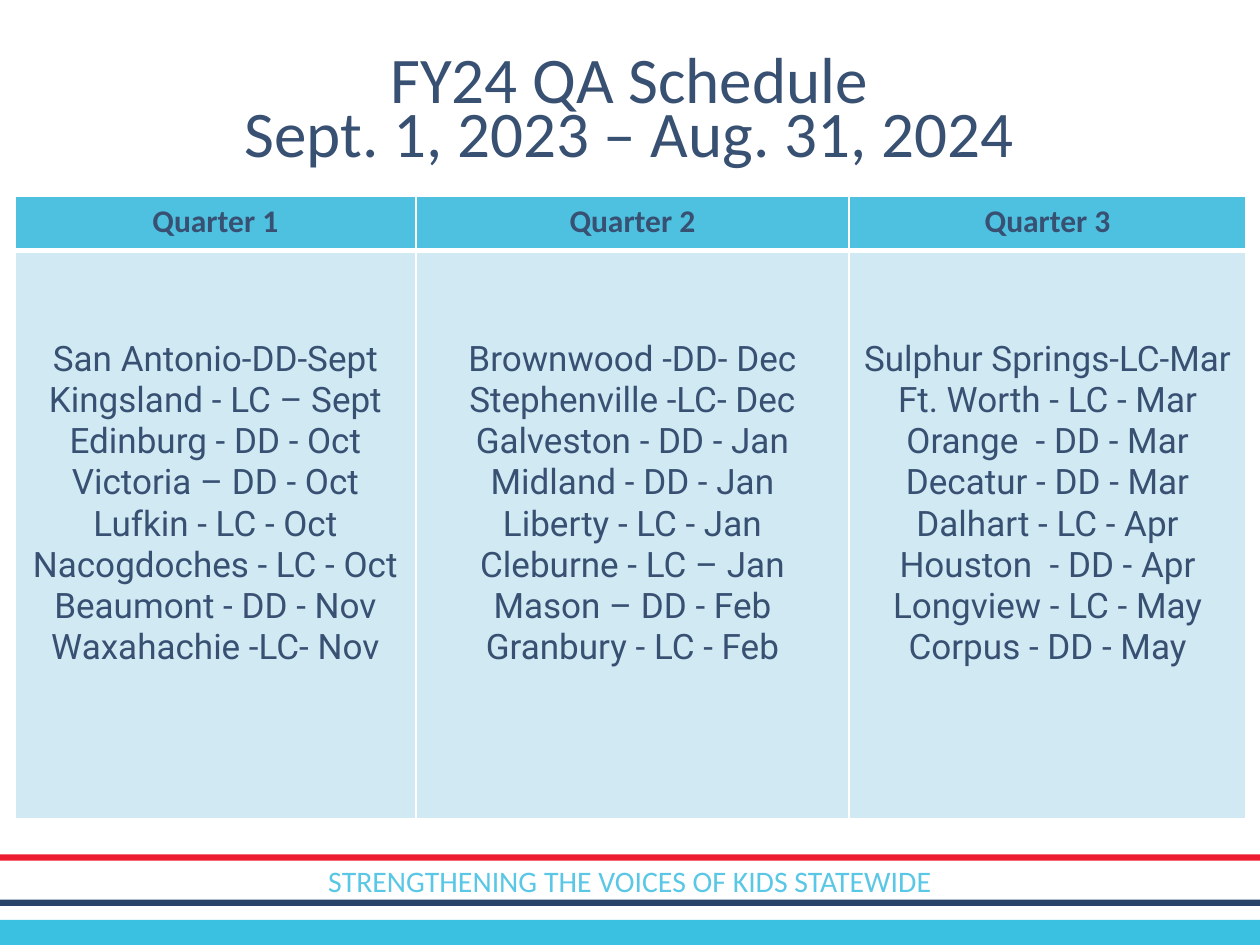
from dataclasses import dataclass

from lxml.etree import SubElement
from pptx import Presentation
from pptx.dml.color import RGBColor
from pptx.enum.shapes import MSO_SHAPE
from pptx.enum.text import MSO_ANCHOR, MSO_AUTO_SIZE, PP_ALIGN
from pptx.oxml.ns import qn
from pptx.util import Inches, Pt


@dataclass(frozen=True)
class Theme:
    """Colours, fonts and type sizes of the deck."""
    navy: str = "385072"
    sky: str = "59C7E5"
    header: str = "4EC1E0"
    body: str = "D0E9F3"
    border: str = "FFFFFF"
    red_rule: str = "ED1C2E"
    navy_rule: str = "2A4469"
    band: str = "3AC1E1"
    heading_font: str = "Calibri"
    list_font: str = "Roboto"
    title_size: float = 37.2
    header_size: float = 18
    list_size: float = 20
    footer_size: float = 17


THEME = Theme()
TITLE = "FY24 QA Schedule\vSept. 1, 2023 – Aug. 31, 2024"
FOOTER = "STRENGTHENING THE VOICES OF KIDS STATEWIDE"
SCHEDULE = {
    "Quarter 1": [
        "San Antonio-DD-Sept", "Kingsland - LC – Sept",
        "Edinburg - DD - Oct", "Victoria – DD - Oct",
        "Lufkin - LC - Oct", "Nacogdoches - LC - Oct",
        "Beaumont - DD - Nov", "Waxahachie -LC- Nov",
    ],
    "Quarter 2": [
        "Brownwood -DD- Dec", "Stephenville -LC- Dec",
        "Galveston - DD - Jan", "Midland - DD - Jan",
        "Liberty - LC - Jan", "Cleburne - LC – Jan",
        "Mason – DD - Feb", "Granbury - LC - Feb",
    ],
    "Quarter 3": [
        "Sulphur Springs-LC-Mar", "Ft. Worth - LC - Mar",
        "Orange  - DD - Mar", "Decatur - DD - Mar",
        "Dalhart - LC - Apr", "Houston  - DD - Apr",
        "Longview - LC - May", "Corpus - DD - May",
    ],
}


def set_values(target, values):
    """Set each attribute named in a dict."""
    for name, value in values.items():
        setattr(target, name, value)


def write_lines(frame, lines, font, size, color, bold=False):
    """Fill a text frame with centred lines."""
    frame.text = "\n".join(lines)
    for para in frame.paragraphs:
        set_values(para, {"alignment": PP_ALIGN.CENTER, "space_before": Pt(0)})
        for span in para.runs:
            set_values(span.font, {"name": font, "size": Pt(size), "bold": bold})
            span.font.color.rgb = RGBColor.from_string(color)


def add_title(page, box):
    """Place the two-line title in its placeholder."""
    title = page.shapes.title
    set_values(title, dict(zip(("left", "top", "width", "height"), box)))
    frame = title.text_frame
    write_lines(frame, [TITLE], THEME.heading_font, THEME.title_size, THEME.navy)
    set_values(frame, {"word_wrap": True, "auto_size": MSO_AUTO_SIZE.NONE,
                       "vertical_anchor": MSO_ANCHOR.MIDDLE})
    para = frame.paragraphs[0]
    para.line_spacing = 0.7
    for line_break in para._p.findall(qn("a:br")):
        SubElement(line_break, qn("a:rPr"), sz=str(round(THEME.title_size * 100)))


def set_borders(cell, widths):
    """Draw cell borders from a dict of side and width in points."""
    properties = cell._tc.get_or_add_tcPr()
    for side, width in widths.items():
        line = SubElement(properties, qn(f"a:ln{side}"), w=str(Pt(width)))
        fill = SubElement(line, qn("a:solidFill"))
        SubElement(fill, qn("a:srgbClr"), val=THEME.border)


def fill_cell(cell, color, borders):
    """Give a cell its borders and fill."""
    set_borders(cell, borders)
    cell.fill.solid()
    cell.fill.fore_color.rgb = RGBColor.from_string(color)


def add_schedule(page, box):
    """Place the table with one column for each quarter."""
    table = page.shapes.add_table(2, len(SCHEDULE), *box).table
    for column, width in zip(table.columns, (3.18, 3.44, 3.15)):
        column.width = Inches(width)
    for row, height in zip(table.rows, (0.43, 4.51)):
        row.height = Inches(height)
    for index, (quarter, visits) in enumerate(SCHEDULE.items()):
        header, body = table.cell(0, index), table.cell(1, index)
        fill_cell(header, THEME.header, {"L": 1, "R": 1, "T": 1, "B": 3})
        fill_cell(body, THEME.body, {"L": 1, "R": 1, "T": 3, "B": 1})
        body.margin_top = Inches(0.7)
        write_lines(header.text_frame, [quarter], THEME.heading_font,
                    THEME.header_size, THEME.navy, bold=True)
        write_lines(body.text_frame, visits, THEME.list_font,
                    THEME.list_size, THEME.navy)


def add_footer(page, box):
    """Place the rules, the band and the motto."""
    left, top, width, height = box
    bars = ((0, 0.05, THEME.red_rule), (0.36, 0.05, THEME.navy_rule),
            (0.52, 0.27, THEME.band))
    for offset, thickness, color in bars:
        bar = page.shapes.add_shape(MSO_SHAPE.RECTANGLE, left, top + Inches(offset),
                                    width, Inches(thickness))
        bar.shadow.inherit = False
        bar.fill.solid()
        bar.fill.fore_color.rgb = RGBColor.from_string(color)
        bar.line.fill.background()
    motto = page.shapes.add_textbox(left, top + Inches(0.02), width, height)
    motto.text_frame.word_wrap = True
    write_lines(motto.text_frame, [FOOTER], THEME.heading_font,
                THEME.footer_size, THEME.sky)


def main():
    """Build and save the deck."""
    deck = Presentation()
    set_values(deck, {"slide_width": Inches(10), "slide_height": Inches(7.5)})
    page = deck.slides.add_slide(deck.slide_layouts.get_by_name("Title Only"))
    add_footer(page, (Inches(0), Inches(6.78), Inches(10), Inches(0.39)))
    add_title(page, (Inches(0.99), Inches(0.41), Inches(8.01), Inches(0.99)))
    add_schedule(page, (Inches(0.12), Inches(1.56), Inches(9.77), Inches(4.94)))
    deck.save("out.pptx")


if __name__ == "__main__":
    main()
